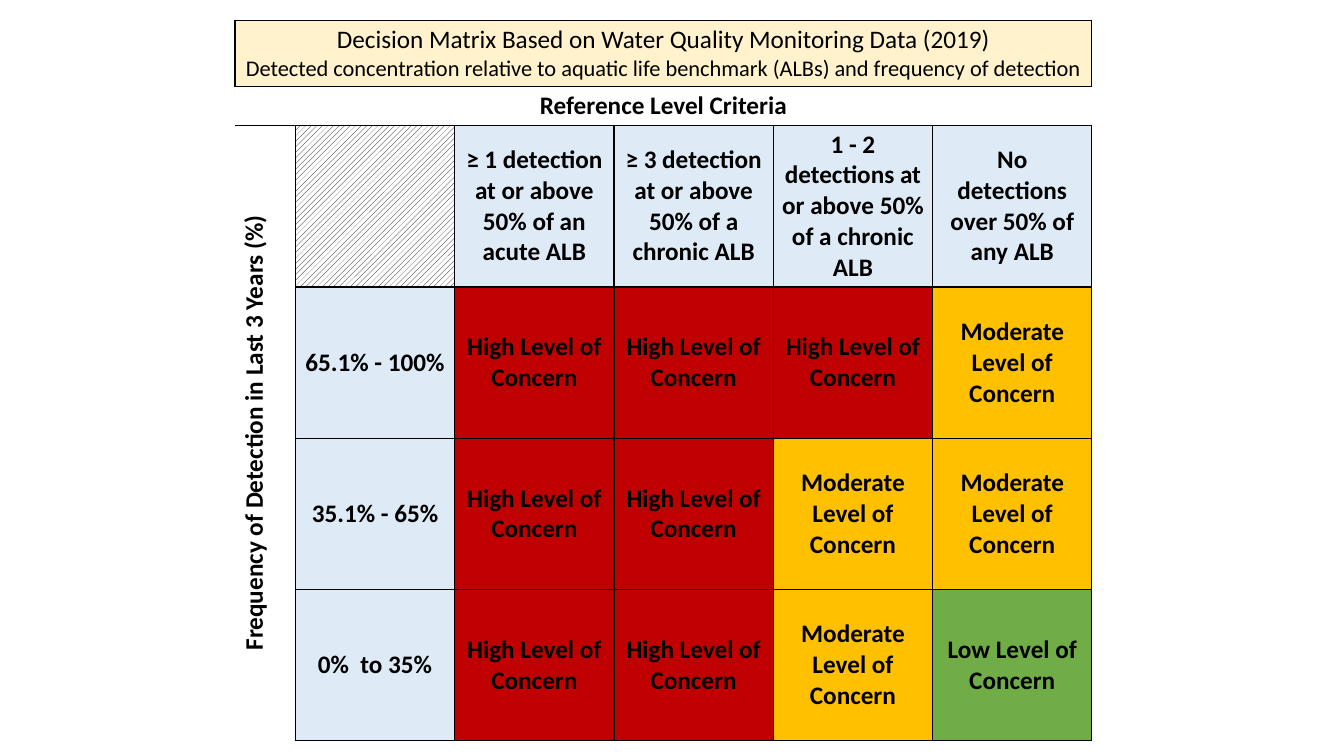
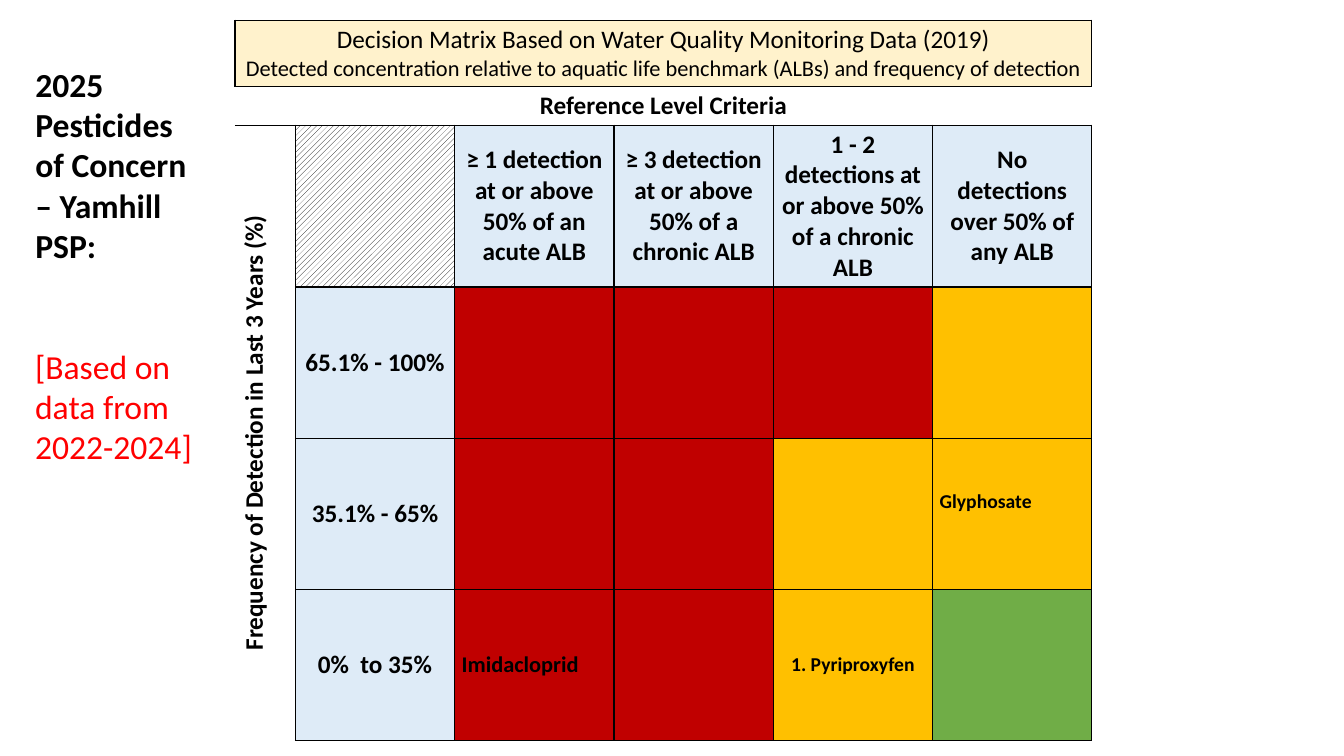
from lxml import etree
from pptx import Presentation
from pptx.dml.color import RGBColor
from pptx.enum.dml import MSO_PATTERN
from pptx.enum.text import MSO_ANCHOR, MSO_AUTO_SIZE, PP_ALIGN
from pptx.oxml.ns import qn
from pptx.util import Inches, Pt

MIDDLE, TOP = MSO_ANCHOR.MIDDLE, MSO_ANCHOR.TOP
CENTER, LEFT = PP_ALIGN.CENTER, PP_ALIGN.LEFT
DIAGONAL = MSO_PATTERN.WIDE_UPWARD_DIAGONAL
NO_AUTOFIT = MSO_AUTO_SIZE.NONE

BLACK = RGBColor(0x00, 0x00, 0x00)
WHITE = RGBColor(0xFF, 0xFF, 0xFF)
CREAM = RGBColor(0xFF, 0xF2, 0xCC)
PALE_BLUE = RGBColor(0xDE, 0xEB, 0xF7)
DARK_RED = RGBColor(0xC0, 0x00, 0x00)
AMBER = RGBColor(0xFF, 0xC0, 0x00)
GREEN = RGBColor(0x70, 0xAD, 0x47)
BRIGHT_RED = RGBColor(0xFF, 0x00, 0x00)

FONT = "Calibri"
NO_STYLE = "{2D5ABB26-0587-4C30-8999-92F81FD0307C}"
COLUMN_WIDTHS = [0.6] + [1.58] * 5
ROW_HEIGHTS = [0.65, 0.38, 1.57] + [1.5] * 3

HEADING = (
    "Decision Matrix Based on Water Quality Monitoring Data (2019)\v"
    "Detected concentration relative to aquatic life benchmark (ALBs) and frequency of detection"
)
CRITERIA = [
    "≥ 1 detection at or above 50% of an acute ALB",
    "≥ 3 detection at or above 50% of a chronic ALB",
    "1 - 2 detections at or above 50% of a chronic ALB",
    "No detections over 50% of any ALB",
]
FREQUENCIES = ["65.1% - 100%", "35.1% - 65%", "0%  to 35%"]
LEVELS = [
    ["High", "High", "High", "Moderate"],
    ["High", "High", "Moderate", "Moderate"],
    ["High", "High", "Moderate", "Low"],
]
LEVEL_COLORS = {"High": DARK_RED, "Moderate": AMBER, "Low": GREEN}


def write(frame, text, size=18, bold=True, color=BLACK, align=CENTER):
    frame.text = text
    para = frame.paragraphs[0]
    para.alignment = align
    for span in para.runs:
        span.font.name = FONT
        span.font.size = Pt(size)
        span.font.bold = bold
        span.font.color.rgb = color


def set_borders(cell, sides="LRTB"):
    """Draw black 1 pt borders on the given sides of a cell."""
    properties = cell._tc.get_or_add_tcPr()
    for position, side in enumerate(sides):
        line = etree.Element(qn(f"a:ln{side}"), w=str(Pt(1)))
        fill = etree.SubElement(line, qn("a:solidFill"))
        etree.SubElement(fill, qn("a:srgbClr"), val=str(BLACK))
        properties.insert(position, line)


deck = Presentation()
deck.slide_width = Inches(13.33)
deck.slide_height = Inches(7.5)
title_only, blank = deck.slide_layouts[5], deck.slide_layouts[6]

matrices = []
for layout in (blank, title_only):
    page = deck.slides.add_slide(layout)
    frame = page.shapes.add_table(
        len(ROW_HEIGHTS), len(COLUMN_WIDTHS), Inches(2.33), Inches(0.2),
        Inches(sum(COLUMN_WIDTHS)), Inches(sum(ROW_HEIGHTS)))
    matrix = frame.table
    matrix.first_row = matrix.horz_banding = False
    matrix._tbl.tblPr.find(qn("a:tableStyleId")).text = NO_STYLE
    for column, width in zip(matrix.columns, COLUMN_WIDTHS):
        column.width = Inches(width)
    for row, height in zip(matrix.rows, ROW_HEIGHTS):
        row.height = Inches(height)

    matrix.cell(0, 0).merge(matrix.cell(0, 5))
    matrix.cell(1, 0).merge(matrix.cell(1, 5))
    matrix.cell(2, 0).merge(matrix.cell(5, 0))

    for row in range(len(ROW_HEIGHTS)):
        for column in range(len(COLUMN_WIDTHS)):
            cell = matrix.cell(row, column)
            cell.vertical_anchor = MIDDLE
            cell.margin_left = cell.margin_right = Inches(0.07)
            cell.margin_top = cell.margin_bottom = Inches(0.04)
            if row == 0:
                cell.fill.solid()
                cell.fill.fore_color.rgb = CREAM
                set_borders(cell)
            elif row == 1:
                cell.fill.background()
                set_borders(cell, "T")
            elif column == 0:
                cell.fill.background()
                set_borders(cell, "R")
            elif row == 2 and column == 1:
                cell.fill.patterned()
                cell.fill.pattern = DIAGONAL
                cell.fill.fore_color.rgb = BLACK
                cell.fill.back_color.rgb = WHITE
                set_borders(cell)
            else:
                is_label = row == 2 or column == 1
                cell.fill.solid()
                cell.fill.fore_color.rgb = (
                    PALE_BLUE if is_label else LEVEL_COLORS[LEVELS[row - 3][column - 2]])
                set_borders(cell)

    heading = matrix.cell(0, 0).text_frame
    write(heading, HEADING, bold=False)
    heading.paragraphs[0].runs[1].font.size = Pt(16)
    write(matrix.cell(1, 0).text_frame, "Reference Level Criteria")
    write(matrix.cell(2, 0).text_frame, "Frequency of Detection in Last 3 Years (%)")
    matrix.cell(2, 0)._tc.get_or_add_tcPr().set("vert", "vert270")
    for column, criterion in enumerate(CRITERIA, start=2):
        write(matrix.cell(2, column).text_frame, criterion)
    for row, frequency in enumerate(FREQUENCIES, start=3):
        write(matrix.cell(row, 1).text_frame, frequency)
    matrices.append(matrix)

level_matrix, pesticide_matrix = matrices

# Slide 1: the level of concern in each cell
for row, levels in enumerate(LEVELS, start=3):
    for column, level in enumerate(levels, start=2):
        write(level_matrix.cell(row, column).text_frame, f"{level} Level of Concern")

# Slide 2: the pesticides found at each level
for row, column, name, size, indent in [
    (4, 5, "Glyphosate", 14, 0.38),
    (5, 2, "Imidacloprid", 16, 0.25),
]:
    frame = pesticide_matrix.cell(row, column).text_frame
    properties = frame.paragraphs[0]._p.get_or_add_pPr()
    properties.set("marL", str(Inches(indent)))
    properties.set("indent", str(-Inches(indent)))
    etree.SubElement(properties, qn("a:buAutoNum"), type="arabicPeriod")
    write(frame, name, size, align=LEFT)
pesticide_matrix.cell(4, 5).margin_bottom = Inches(0.28)
write(pesticide_matrix.cell(5, 4).text_frame, "1. Pyriproxyfen", 14)

title = page.shapes.title
title.left, title.top = Inches(0.25), Inches(0.58)
title.width, title.height = Inches(1.83), Inches(2.1)
note = page.shapes.add_textbox(Inches(0.25), Inches(3.38), Inches(1.83), Inches(1.3))
for box, text, bold, color in [
    (title, "2025 Pesticides of Concern – Yamhill PSP:", True, BLACK),
    (note, "[Based on data from 2022-2024]", False, BRIGHT_RED),
]:
    frame = box.text_frame
    frame.word_wrap = True
    frame.auto_size = NO_AUTOFIT
    frame.vertical_anchor = TOP
    write(frame, text, 24, bold, color, LEFT)

deck.save("out.pptx")
